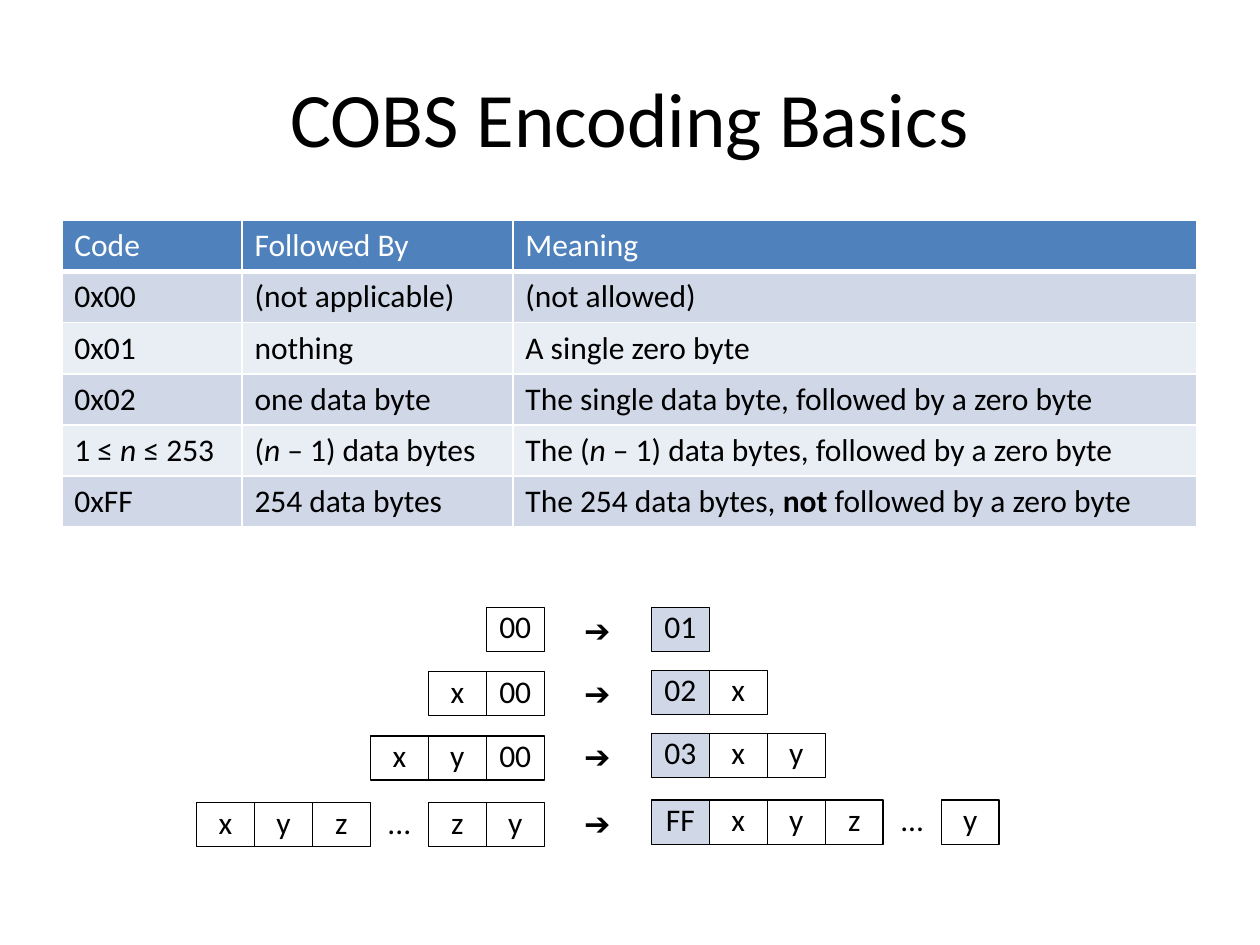
from lxml import etree
from pptx import Presentation
from pptx.dml.color import RGBColor
from pptx.enum.shapes import MSO_SHAPE
from pptx.enum.text import MSO_ANCHOR, PP_ALIGN
from pptx.oxml.ns import qn
from pptx.util import Inches, Pt

RECTANGLE = MSO_SHAPE.RECTANGLE
TOP, MIDDLE = MSO_ANCHOR.TOP, MSO_ANCHOR.MIDDLE
LEFT, CENTER = PP_ALIGN.LEFT, PP_ALIGN.CENTER

COLORS = {
    "text": "000000",
    "white": "FFFFFF",
    "header": "4F81BD",
    "band_dark": "D0D8E8",
    "band_light": "E9EDF4",
}

# Each cell is a list of (text, style) runs; style is "", "i" or "b"
CODE_ROWS = [
    [[("Code", "")], [("Followed By", "")], [("Meaning", "")]],
    [[("0x00", "")], [("(not applicable)", "")], [("(not allowed)", "")]],
    [[("0x01", "")], [("nothing", "")], [("A single zero byte", "")]],
    [[("0x02", "")], [("one data byte", "")],
     [("The single data byte, followed by a zero byte", "")]],
    [[("1 ≤ ", ""), ("n", "i"), (" ≤ 253", "")],
     [("(", ""), ("n", "i"), (" – 1) data bytes", "")],
     [("The (", ""), ("n", "i"),
      (" – 1) data bytes, followed by a zero byte", "")]],
    [[("0xFF", "")], [("254 data bytes", "")],
     [("The 254 data bytes, ", ""), ("not ", "b"),
      ("followed by a zero byte", "")]],
]
COLUMN_WIDTHS = (1.43, 2.15, 5.43)

# Input bytes, encoded bytes, and the top of each side
EXAMPLES = [
    (["00"], ["01"], 4.82, 4.82),
    (["x", "00"], ["02", "x"], 5.33, 5.32),
    (["x", "y", "00"], ["03", "x", "y"], 5.84, 5.82),
    (["x", "y", "z", "...", "z", "y"],
     ["FF", "x", "y", "z", "...", "y"], 6.37, 6.35),
]
BYTE_WIDTH, BYTE_HEIGHT = 0.4625, 0.35
BYTE_WIDTH = round(BYTE_WIDTH, 2)
INPUT_RIGHT, ENCODED_LEFT = 4.32, 5.17
ARROW_LEFT, ARROW_SIZE = 4.54, 0.4


def color(name):
    return RGBColor.from_string(COLORS[name])


def write_text(frame, runs, *, size=18, font="Calibri", ink="text",
               align=CENTER, anchor=TOP, margins=None):
    """Fill a text frame with one paragraph of (text, style) runs."""
    frame.word_wrap = True
    frame.vertical_anchor = anchor
    if margins:
        (frame.margin_left, frame.margin_top,
         frame.margin_right, frame.margin_bottom) = map(Inches, margins)
    paragraph = frame.paragraphs[0]
    paragraph.alignment = align
    for text, style in runs:
        run = paragraph.add_run()
        run.text = text
        run.font.name = font
        run.font.size = Pt(size)
        run.font.bold = style == "b"
        run.font.italic = style == "i"
        run.font.color.rgb = color(ink)


def add_title(slide, left, top, width, height):
    title = slide.shapes.title
    title.left, title.top = Inches(left), Inches(top)
    title.width, title.height = Inches(width), Inches(height)
    write_text(title.text_frame, [("COBS Encoding Basics", "")],
               size=44, anchor=MIDDLE)


def set_borders(cell, bottom):
    properties = cell._tc.get_or_add_tcPr()
    widths = {"a:lnL": 1, "a:lnR": 1, "a:lnT": 1, "a:lnB": bottom}
    for position, (tag, width) in enumerate(widths.items()):
        line = etree.Element(qn(tag), w=str(Pt(width)))
        fill = etree.SubElement(line, qn("a:solidFill"))
        etree.SubElement(fill, qn("a:srgbClr"), val=COLORS["white"])
        properties.insert(position, line)


def add_code_table(slide, left, top, width, height):
    table = slide.shapes.add_table(
        len(CODE_ROWS), len(COLUMN_WIDTHS), Inches(left), Inches(top),
        Inches(width), Inches(height)).table
    for column, column_width in zip(table.columns, COLUMN_WIDTHS):
        column.width = Inches(column_width)
    for r, code_row in enumerate(CODE_ROWS):
        is_header = r == 0
        band = "header" if is_header else "band_dark" if r % 2 else "band_light"
        for c, runs in enumerate(code_row):
            cell = table.cell(r, c)
            cell.fill.solid()
            cell.fill.fore_color.rgb = color(band)
            set_borders(cell, bottom=3 if is_header else 1)
            write_text(cell.text_frame, runs, align=LEFT,
                       ink="white" if is_header else "text")


def add_bytes(group, labels, left, top, has_code=False):
    """Place a row of adjoining byte boxes; an ellipsis gets no box."""
    for i, label in enumerate(labels):
        box = (Inches(left + i * BYTE_WIDTH), Inches(top),
               Inches(BYTE_WIDTH), Inches(BYTE_HEIGHT))
        if label == "...":
            byte = group.shapes.add_textbox(*box)
        else:
            byte = group.shapes.add_shape(RECTANGLE, *box)
            byte.shadow.inherit = False
            byte.line.color.rgb = color("text")
            byte.line.width = Pt(0.75)
            if has_code and i == 0:
                byte.fill.solid()
                byte.fill.fore_color.rgb = color("band_dark")
            else:
                byte.fill.background()
        write_text(byte.text_frame, [(label, "")], margins=(0.1, 0, 0.1, 0.05))


def add_examples(slide):
    inputs = slide.shapes.add_group_shape()
    encodings = slide.shapes.add_group_shape()
    for raw, encoded, raw_top, encoded_top in EXAMPLES:
        add_bytes(inputs, raw, INPUT_RIGHT - len(raw) * BYTE_WIDTH, raw_top)
        add_bytes(encodings, encoded, ENCODED_LEFT, encoded_top, has_code=True)
        arrow = slide.shapes.add_textbox(
            Inches(ARROW_LEFT), Inches(encoded_top - 0.02),
            Inches(ARROW_SIZE), Inches(ARROW_SIZE))
        write_text(arrow.text_frame, [("➔", "")], font="Arial",
                   margins=(0, 0.05, 0, 0.05))


def main():
    deck = Presentation()
    deck.slide_width, deck.slide_height = Inches(10), Inches(7.5)
    slide = deck.slides.add_slide(deck.slide_layouts[5])

    add_title(slide, 0.5, 0.3, 9, 1.25)
    # Meaning of each code byte
    add_code_table(slide, 0.49, 1.75, sum(COLUMN_WIDTHS), 2.43)
    # Input bytes and their encodings
    add_examples(slide)

    deck.save("out.pptx")


if __name__ == "__main__":
    main()
